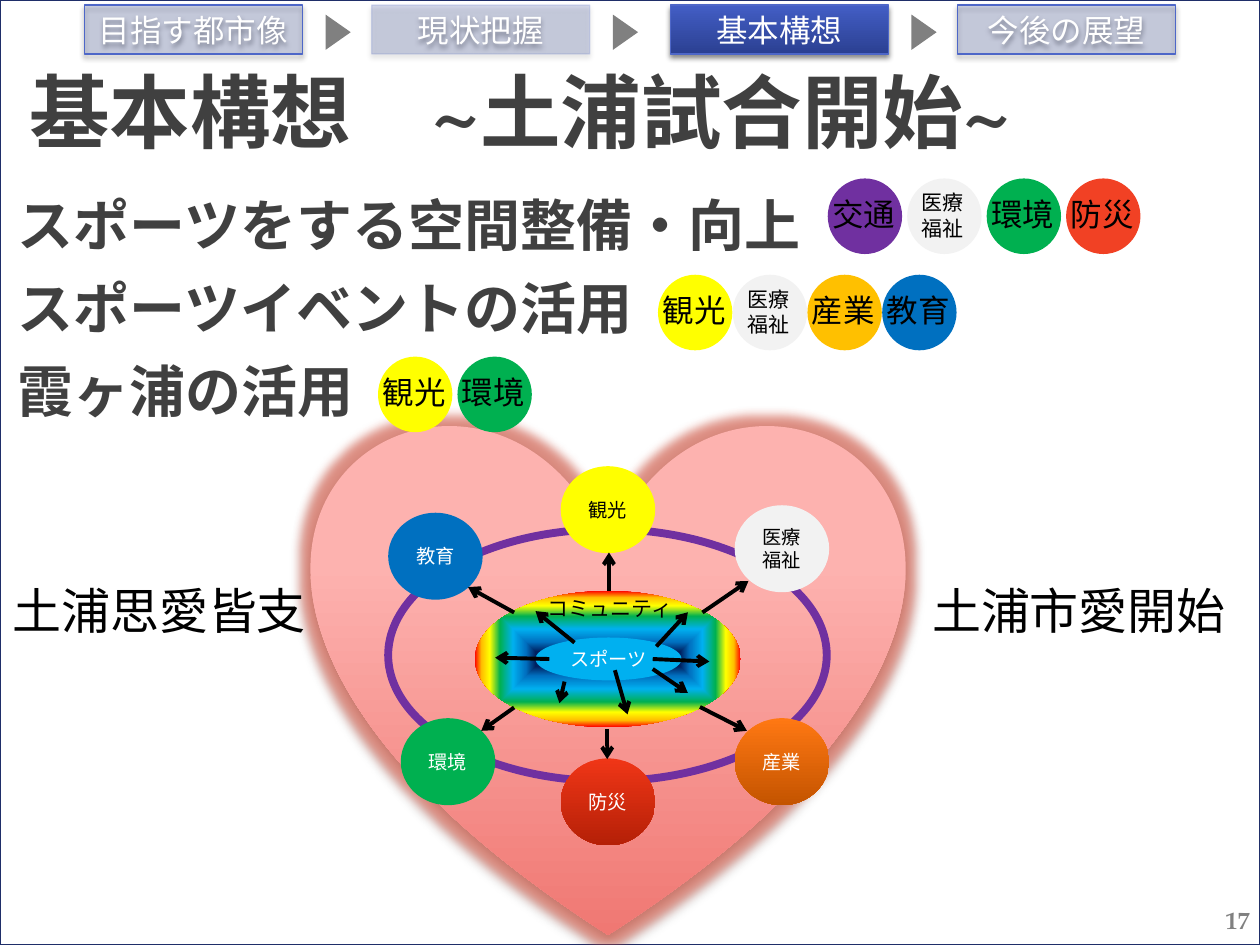
from pptx import Presentation
from pptx.dml.color import RGBColor
from pptx.enum.shapes import MSO_CONNECTOR, MSO_SHAPE
from pptx.enum.text import MSO_ANCHOR, PP_ALIGN
from pptx.oxml import parse_xml
from pptx.oxml.ns import nsdecls, qn
from pptx.util import Pt

RECT, OVAL = MSO_SHAPE.RECTANGLE, MSO_SHAPE.OVAL
HEART, WEDGE = MSO_SHAPE.HEART, MSO_SHAPE.ISOSCELES_TRIANGLE
LINE = MSO_CONNECTOR.STRAIGHT
TOP, MIDDLE = MSO_ANCHOR.TOP, MSO_ANCHOR.MIDDLE
LEFT, CENTER, RIGHT = PP_ALIGN.LEFT, PP_ALIGN.CENTER, PP_ALIGN.RIGHT

SANS, SERIF = "Arial", "TeX Gyre Pagella"
BLACK, WHITE, DARK, GRAY = "000000", "FFFFFF", "404040", "808080"
PURPLE, GREEN, BLUE, YELLOW = "7030A0", "00B050", "0070C0", "FFFF00"
PALE, RED, AMBER, SKY = "F2F2F2", "F14124", "FFC000", "00B0F0"

STEPS = [("目指す都市像", 48.2), ("現状把握", 212.4), ("基本構想", 383), ("今後の展望", 547.2)]
TOPICS = ["スポーツをする空間整備・向上", "スポーツイベントの活用", "霞ヶ浦の活用"]
BADGES = [
    (473, 102, 45.4, [("交通", PURPLE), ("医療\n福祉", PALE), ("環境", GREEN), ("防災", RED)]),
    (376, 157, 42.7, [("観光", YELLOW), ("医療\n福祉", PALE), ("産業", AMBER), ("教育", BLUE)]),
    (216, 203.8, 45.4, [("観光", YELLOW), ("環境", GREEN)]),
]
FIELDS = [
    ("教育", 221.8, 293, BLUE, WHITE),
    ("観光", 320.4, 266.4, YELLOW, BLACK),
    ("医療\n福祉", 419.8, 288.7, PALE, BLACK),
    ("環境", 229, 410.4, GREEN, WHITE),
    ("防災", 320.4, 433.4, [(0, "F03617"), (100, "B52007")], WHITE),
    ("産業", 419.8, 410.4, [(0, "FF7813"), (100, "C45400")], WHITE),
]
RAINBOW = [(11, "002060"), (25, BLUE), (44, SKY), (63, GREEN),
           (78, YELLOW), (90, AMBER), (100, "FF0000")]
OUTER = [
    (293.8, 350, 267.5, 335.5), (348, 337.7, 348, 315.7), (401.4, 350, 427.7, 332),
    (293.8, 404.3, 275, 417.6), (347, 416.5, 347, 433.8), (400, 404, 426.8, 417.6),
]
INNER = [
    (313.9, 376.6, 283, 375.8), (375.1, 369.4, 393.1, 349.9), (328.3, 367.2, 306, 349.2),
    (351.4, 383, 358.6, 408.2), (322.6, 389.5, 319.7, 401.8), (373, 382.3, 393.1, 396),
    (373, 376.6, 405.4, 378),
]


def rgb(code):
    """Turn a hex string into a colour."""
    return RGBColor.from_string(code)


def blend(shape, stops, ring=False):
    """Fill a shape with a gradient, downward or from its centre."""
    marks = "".join(f'<a:gs pos="{pos * 1000}"><a:srgbClr val="{code}"/></a:gs>'
                    for pos, code in stops)
    way = ('<a:path path="shape"><a:fillToRect l="50000" t="50000" r="50000" b="50000"/></a:path>'
           if ring else '<a:lin ang="5400000" scaled="0"/>')
    shape.fill.gradient()
    old = shape._element.spPr.find(qn("a:gradFill"))
    new = parse_xml(f'<a:gradFill {nsdecls("a")}><a:gsLst>{marks}</a:gsLst>{way}</a:gradFill>')
    old.getparent().replace(old, new)


def fade(color, part):
    """Give a solid colour element an opacity in percent."""
    color.append(parse_xml(f'<a:alpha {nsdecls("a")} val="{part * 1000}"/>'))


def cast(shape, part, blur, dist):
    """Add a soft black shadow below a shape."""
    shape._element.spPr.find(qn("a:effectLst")).append(parse_xml(
        f'<a:outerShdw {nsdecls("a")} blurRad="{Pt(blur)}" dist="{Pt(dist)}" dir="5400000" '
        f'rotWithShape="0"><a:srgbClr val="000000"><a:alpha val="{part * 1000}"/>'
        '</a:srgbClr></a:outerShdw>'))


def glow(shape, code, size, part):
    """Add a coloured glow around a shape."""
    shape._element.spPr.find(qn("a:effectLst")).append(parse_xml(
        f'<a:glow {nsdecls("a")} rad="{Pt(size)}"><a:srgbClr val="{code}">'
        f'<a:alpha val="{part * 1000}"/></a:srgbClr></a:glow>'))


def write(shape, text, size, color, align=LEFT, anchor=TOP, bold=False, font=SERIF):
    """Put styled paragraphs into a shape and return its frame."""
    frame = shape.text_frame
    frame.text = text
    frame.vertical_anchor = anchor
    for para in frame.paragraphs:
        para.alignment = align
        para.font.size, para.font.name, para.font.bold = Pt(size), font, bold
        para.font.color.rgb = rgb(color)
    return frame


def draw(slide, kind, box, fill=None, line=None, width=0.75, ring=False):
    """Add a preset shape with its fill and line."""
    shape = slide.shapes.add_shape(kind, *map(Pt, box))
    shape.shadow.inherit = False
    if fill is None:
        shape.fill.background()
    elif isinstance(fill, str):
        shape.fill.solid()
        shape.fill.fore_color.rgb = rgb(fill)
    else:
        blend(shape, fill, ring)
    if line:
        shape.line.color.rgb = rgb(line)
        shape.line.width = Pt(width)
    else:
        shape.line.fill.background()
    return shape


def label(slide, box, text, size, color=BLACK, wrap=True, **style):
    """Add a text box."""
    area = slide.shapes.add_textbox(*map(Pt, box))
    frame = write(area, text, size, color, **style)
    frame.word_wrap = wrap
    return frame


def disc(slide, box, fill, text, color):
    """Add an ellipse with a small centred caption."""
    shape = draw(slide, OVAL, box, fill)
    frame = write(shape, text, 11, color, CENTER, MIDDLE)
    frame.margin_left = frame.margin_right = 0


def arrow(slide, ends):
    """Add a black line with an open arrowhead at its end."""
    line = slide.shapes.add_connector(LINE, *map(Pt, ends))
    line.line.color.rgb = rgb(BLACK)
    line.line.width = Pt(2.25)
    props = line._element.spPr
    props.find(qn("a:ln")).append(parse_xml(f'<a:tailEnd {nsdecls("a")} type="arrow"/>'))
    props.append(parse_xml(f'<a:effectLst {nsdecls("a")}/>'))


def steps(slide):
    """Add the row of chapter steps, with the present one lit."""
    for name, left in STEPS:
        now = name == "基本構想"
        fill = [(0, "435EC5"), (100, "2B4092")] if now else "31489F"
        shape = draw(slide, RECT, (left, 2.9, 124.6, 28), fill, "4E67C8")
        if not now:
            fade(shape._element.spPr.find(qn("a:solidFill"))[0], 20)
        if name == "現状把握":
            fade(shape._element.spPr.find(qn("a:ln")).find(qn("a:solidFill"))[0], 20)
        cast(shape, 45, 3.1, 1.8)
        write(shape, name, 18, WHITE, CENTER, MIDDLE, font=SANS)
    for name, left in STEPS[:-1]:
        wedge = draw(slide, WEDGE, (left + 134.9, 11.2, 20.2, 14.4), GRAY)
        wedge.rotation = 90


def badges(slide):
    """Add the rows of coloured badges beside the topics."""
    for left, top, step, items in BADGES:
        for i, (text, fill) in enumerate(items):
            x = left + i * step
            draw(slide, OVAL, (x, top, 42.5, 43.2), fill)
            if "\n" in text:
                label(slide, (x + 1.4, top + 3, 50.4, 36), text, 12)
            else:
                label(slide, (x - 4.5, top + 6, 59, 28.8), text, 18)


def wheel(slide):
    """Add the ring of fields around the community."""
    draw(slide, OVAL, (221.8, 302.4, 250.6, 144), None, PURPLE, 4.5)
    draw(slide, OVAL, (271.4, 337.7, 151.9, 77.8), RAINBOW, ring=True)
    label(slide, (306, 337, 87.1, 21.6), "コミュニティ", 12, wrap=False)
    for text, left, top, fill, color in FIELDS:
        disc(slide, (left, top, 54, 49.7), fill, text, color)
    disc(slide, (306, 364.3, 83.5, 24.5), SKY, "スポーツ", WHITE)
    for ends in OUTER + INNER:
        arrow(slide, ends)


def main():
    """Build the slide and save it."""
    deck = Presentation()
    deck.slide_width, deck.slide_height = Pt(720), Pt(540)
    slide = deck.slides.add_slide(deck.slide_layouts[6])
    draw(slide, RECT, (0, 0, 720, 540), WHITE, "1F2E69", 1.25)
    steps(slide)
    heart = draw(slide, HEART, (178.6, 239.8, 337.7, 294.5), [(28, "FDB2AF"), (100, "F07873")])
    glow(heart, "E1523D", 11, 55)
    cast(heart, 32, 3.5, 2.2)
    label(slide, (-0.7, 31.7, 720, 90), " 基本構想\u3000~土浦試合開始~".replace("\u3000", "　"), 46, DARK, bold=True)
    topics = label(slide, (-0.7, 105.8, 720.7, 396.7), "\n".join(TOPICS), 32, DARK, bold=True)
    topics.margin_left = Pt(10.8)
    for para in topics.paragraphs:
        para.space_before, para.space_after = Pt(6.4), Pt(3)
        para.line_spacing = Pt(38)
    badges(slide)
    wheel(slide)
    label(slide, (525.6, 328.3, 184.3, 41), "土浦市愛開始", 28, wrap=False)
    label(slide, (0, 328.3, 184.3, 41), "土浦思愛皆支", 28, wrap=False)
    label(slide, (577.4, 511.2, 144, 28.8), "17", 14, GRAY, align=RIGHT, anchor=MIDDLE, bold=True)
    deck.save("out.pptx")


if __name__ == "__main__":
    main()
